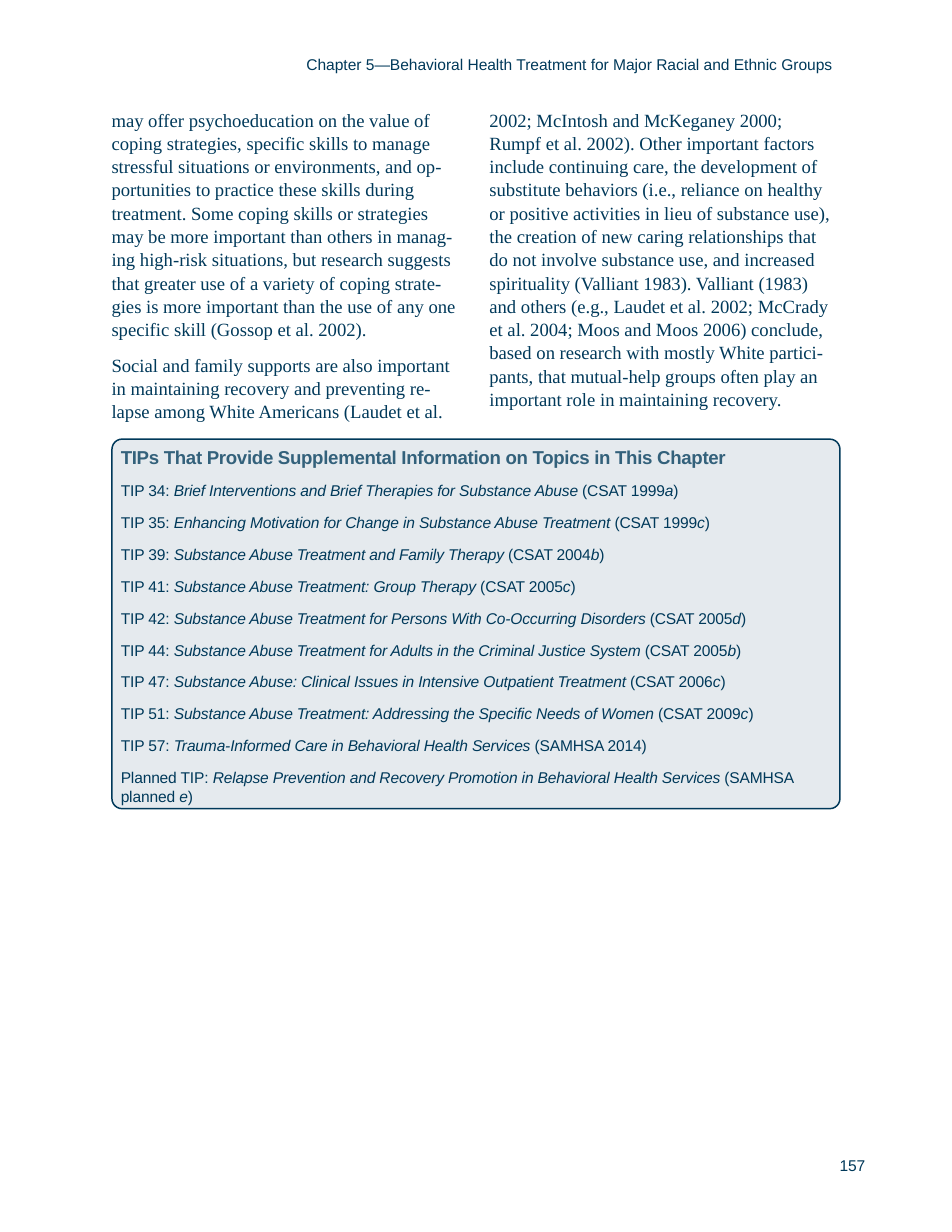
from pptx import Presentation
from pptx import util as u
from pptx.dml.color import RGBColor
from pptx.enum import shapes, text
from pptx.oxml.ns import qn
from lxml import etree

NAVY = RGBColor(0x00, 0x39, 0x5A)
SLATE = RGBColor(0x33, 0x61, 0x7B)
SANS, SERIF = "Arial", "Times New Roman"

HEADER = "Chapter 5—Behavioral Health Treatment for Major Racial and Ethnic Groups"
PAGE_NUMBER = "157"

LEFT_COLUMN = [
    ["may offer psychoeducation on the value of",
     "coping strategies, specific skills to manage",
     "stressful situations or environments, and op-",
     "portunities to practice these skills during",
     "treatment. Some coping skills or strategies",
     "may be more important than others in manag-",
     "ing high-risk situations, but research suggests",
     "that greater use of a variety of coping strate-",
     "gies is more important than the use of any one",
     "specific skill (Gossop et al. 2002)."],
    ["Social and family supports are also important",
     "in maintaining recovery and preventing re-",
     "lapse among White Americans (Laudet et al."],
]
RIGHT_COLUMN = [
    ["2002; McIntosh and McKeganey 2000;",
     "Rumpf et al. 2002). Other important factors",
     "include continuing care, the development of",
     "substitute behaviors (i.e., reliance on healthy",
     "or positive activities in lieu of substance use),",
     "the creation of new caring relationships that",
     "do not involve substance use, and increased",
     "spirituality (Valliant 1983). Valliant (1983)",
     "and others (e.g., Laudet et al. 2002; McCrady",
     "et al. 2004; Moos and Moos 2006) conclude,",
     "based on research with mostly White partici-",
     "pants, that mutual-help groups often play an",
     "important role in maintaining recovery."],
]

TIPS_TITLE = "TIPs That Provide Supplemental Information on Topics in This Chapter"
TIPS = [
    ("TIP 34", "Brief Interventions and Brief Therapies for Substance Abuse", "CSAT 1999", "a"),
    ("TIP 35", "Enhancing Motivation for Change in Substance Abuse Treatment", "CSAT 1999", "c"),
    ("TIP 39", "Substance Abuse Treatment and Family Therapy", "CSAT 2004", "b"),
    ("TIP 41", "Substance Abuse Treatment: Group Therapy", "CSAT 2005", "c"),
    ("TIP 42", "Substance Abuse Treatment for Persons With Co-Occurring Disorders", "CSAT 2005", "d"),
    ("TIP 44", "Substance Abuse Treatment for Adults in the Criminal Justice System", "CSAT 2005", "b"),
    ("TIP 47", "Substance Abuse: Clinical Issues in Intensive Outpatient Treatment", "CSAT 2006", "c"),
    ("TIP 51", "Substance Abuse Treatment: Addressing the Specific Needs of Women", "CSAT 2009", "c"),
    ("TIP 57", "Trauma-Informed Care in Behavioral Health Services", "SAMHSA 2014", ""),
    ("Planned TIP", "Relapse Prevention and Recovery Promotion in Behavioral Health Services",
     "SAMHSA planned ", "e"),
]


def add_text(page, paras, left, top, width, height, gap=8, line=1.04):
    box = page.shapes.add_textbox(u.Cm(left), u.Cm(top), u.Cm(width), u.Cm(height))
    frame = box.text_frame
    frame.word_wrap = True
    frame.auto_size = text.MSO_AUTO_SIZE.NONE
    frame.margin_left = frame.margin_right = frame.margin_bottom = 0
    frame.margin_top = u.Cm(0.03)
    for index, spans in enumerate(paras):
        para = frame.add_paragraph() if index else frame.paragraphs[0]
        para.space_before = u.Pt(gap if index else 1)
        para.line_spacing = line
        for words, style in spans:
            add_words(para, words, **style)


def add_words(para, words, size=10, font=SANS, color=NAVY, bold=False, italic=False, spacing=0):
    for index, words_on_line in enumerate(words.split("\n")):
        if index:
            para.add_line_break()
        span = para.add_run()
        span.text = words_on_line
        span.font.size = u.Pt(size)
        span.font.name = font
        span.font.color.rgb = color
        span.font.bold = bold
        span.font.italic = italic
        span.font._element.set("spc", str(spacing))


def add_panel(page, left, top, width, height, radius):
    panel = page.shapes.add_shape(shapes.MSO_SHAPE.ROUNDED_RECTANGLE,
                                  u.Cm(left), u.Cm(top), u.Cm(width), u.Cm(height))
    panel.shadow.inherit = False
    panel.adjustments[0] = radius / height
    panel.fill.solid()
    panel.fill.fore_color.rgb = NAVY
    color = panel._element.spPr.find(qn("a:solidFill")).find(qn("a:srgbClr"))
    etree.SubElement(color, qn("a:alpha")).set("val", "10000")
    panel.line.color.rgb = NAVY
    panel.line.width = u.Pt(0.96)


def tip_spans(label, title, source, letter):
    plain = dict(spacing=-8)
    slanted = dict(plain, italic=True)
    if not letter:
        return [(f"{label}: ", plain), (title, slanted), (f" ({source})", plain)]
    return [(f"{label}: ", plain), (title, slanted), (f" ({source}", plain),
            (letter, slanted), (")", plain)]


def main():
    deck = Presentation()
    deck.slide_width, deck.slide_height = u.Cm(21.59), u.Cm(27.94)
    page = deck.slides.add_slide(deck.slide_layouts[6])

    add_text(page, [[(HEADER, {})]], 6.95, 1.22, 12.3, 0.48, line=1)

    body = dict(size=12, font=SERIF)
    for left, column in ((2.53, LEFT_COLUMN), (11.1, RIGHT_COLUMN)):
        paras = [[("\n".join(lines), body)] for lines in column]
        add_text(page, paras, left, 2.41, 8.2, 6.96)

    add_panel(page, 2.54, 9.96, 16.51, 8.38, 0.23)
    title = (TIPS_TITLE, dict(size=12, color=SLATE, bold=True, spacing=-20))
    add_text(page, [[title]] + [tip_spans(*tip) for tip in TIPS], 2.74, 10.06, 15.52, 8.05)

    add_text(page, [[(PAGE_NUMBER, {})]], 19.04, 26.19, 0.8, 0.48, line=1)
    deck.save("out.pptx")


if __name__ == "__main__":
    main()
